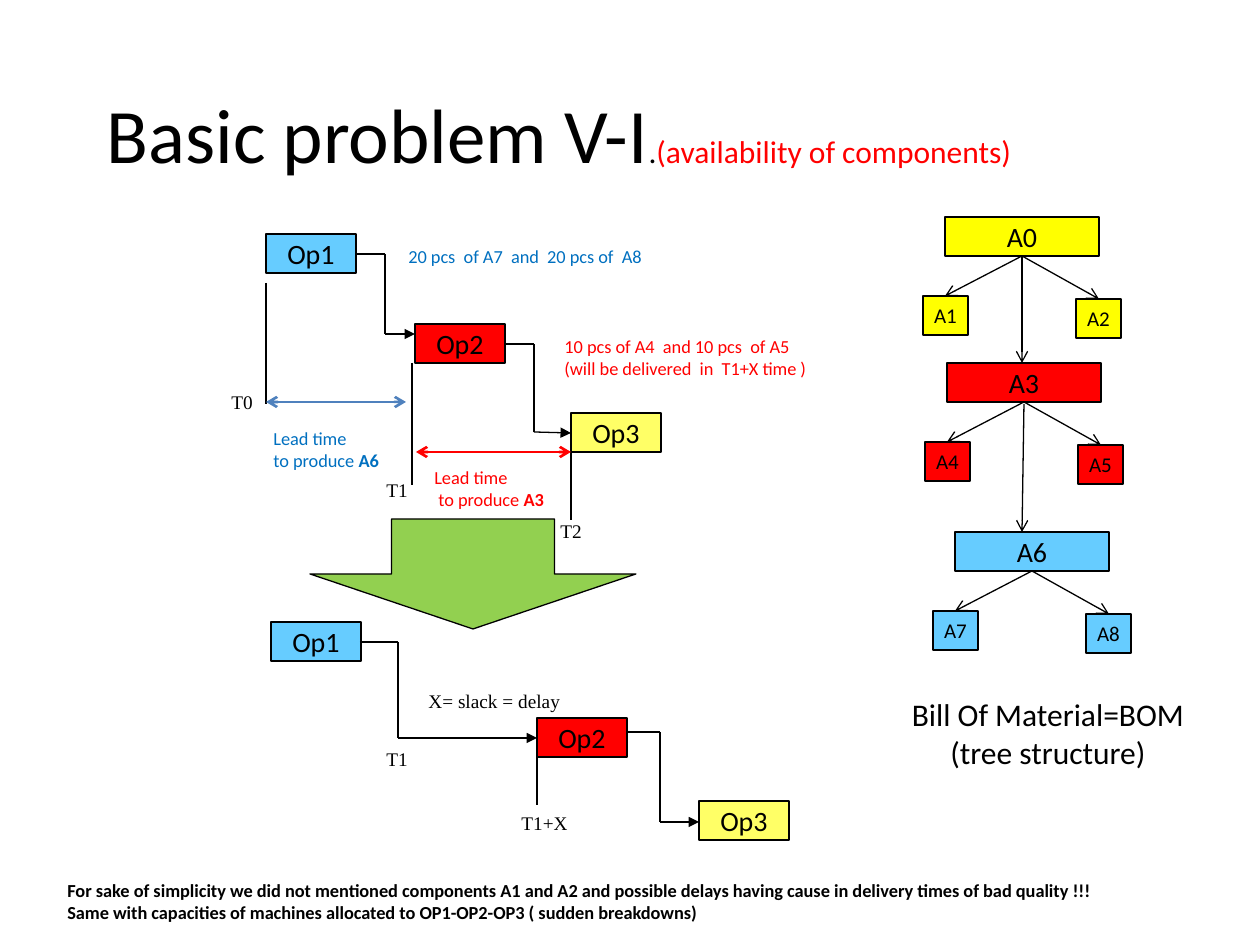
"""Build the slide on lead times and the bill of material tree."""
import dataclasses
import itertools
import typing

import lxml.etree
import pptx
import pptx.dml.color
import pptx.enum.dml
import pptx.enum.shapes
import pptx.enum.text
import pptx.oxml.ns
import pptx.util

SCALE = 914400 / 126
RGB = pptx.dml.color.RGBColor.from_string
SHAPE = pptx.enum.shapes.MSO_SHAPE
ALIGN = pptx.enum.text.PP_ALIGN
ANCHOR = pptx.enum.text.MSO_ANCHOR
FIT = pptx.enum.text.MSO_AUTO_SIZE.SHAPE_TO_FIT_TEXT


@dataclasses.dataclass(frozen=True)
class Theme:
    sans: str = "Calibri"
    serif: str = "Times New Roman"
    black: str = "000000"
    red: str = "FF0000"
    blue: str = "0070C0"
    steel: str = "4F81BD"
    sky: str = "66CCFF"
    lemon: str = "FFFF66"
    yellow: str = "FFFF00"
    green: str = "92D050"
    title: float = 44
    large: float = 18
    box: float = 16
    leaf: float = 12
    mark: float = 11
    note: float = 10.5
    thin: float = 0.75
    thick: float = 1.5


THEME = Theme()


class Point(typing.NamedTuple):
    x: int
    y: int


class Box(typing.NamedTuple):
    text: str
    x: int
    y: int
    fill: str
    width: int = 90
    height: int = 39
    size: float = THEME.box
    kind: SHAPE = SHAPE.RECTANGLE


class Tree(typing.NamedTuple):
    root: str
    left: str
    right: str
    x: int
    y: int
    fill: str


class Label(typing.NamedTuple):
    lines: tuple[str, ...]
    x: int
    y: int
    width: int
    height: int = 37
    color: str = THEME.black
    size: float = THEME.mark
    font: str = THEME.serif
    strong: str = ""
    bold: bool = False
    indent: int = 0
    align: ALIGN = ALIGN.LEFT


BOXES = [
    Box("Op1", 266, 234, THEME.sky),
    Box("Op2", 415, 324, THEME.red),
    Box("Op3", 571, 413, THEME.lemon),
    Box("", 310, 519, THEME.green, 326, 110, kind=SHAPE.DOWN_ARROW),
    Box("Op1", 271, 622, THEME.sky),
    Box("Op2", 537, 718, THEME.red),
    Box("Op3", 699, 801, THEME.lemon),
]
TREES = [
    Tree("A0", "A1", "A2", 945, 217, THEME.yellow),
    Tree("A3", "A4", "A5", 947, 363, THEME.red),
    Tree("A6", "A7", "A8", 955, 532, THEME.sky),
]
ROUTES = [
    [Point(355, 254), Point(385, 254), Point(385, 334), Point(415, 334)],
    [Point(504, 344), Point(534, 344), Point(534, 432), Point(571, 433)],
    [Point(360, 642), Point(398, 642), Point(398, 738), Point(537, 738)],
    [Point(626, 732), Point(660, 732), Point(660, 822), Point(699, 822)],
]
TICKS = [(266, 283, 404), (412, 363, 485), (571, 451, 520), (537, 738, 805)]
SPANS = [(266, 406, 402, THEME.steel), (416, 571, 452, THEME.red)]
NOTE = {"height": 57, "size": THEME.note, "font": THEME.sans}
LABELS = [
    Label(("20 pcs  of A7  and  20 pcs of  A8",), 396, 239, 267,
          **{**NOTE, "height": 35}, color=THEME.blue),
    Label(("10 pcs of A4  and 10 pcs  of A5", "(will be delivered  in  T1+X time )"),
          552, 329, 281, **NOTE, color=THEME.red),
    Label(("Lead time", "to produce "), 261, 421, 134, **NOTE, color=THEME.blue, strong="A6"),
    Label(("Lead time", "to produce "), 422, 460, 137, **NOTE, color=THEME.red,
          strong="A3", indent=4),
    Label(("T0",), 219, 384, 47),
    Label(("T1",), 374, 472, 48),
    Label(("T2",), 548, 513, 47),
    Label(("X= slack = delay",), 416, 683, 158),
    Label(("T1",), 374, 741, 48),
    Label(("T1+X",), 509, 805, 72),
    Label(("Bill Of Material=BOM", "(tree structure)"), 898, 689, 300, 89,
          size=THEME.large, font=THEME.sans, align=ALIGN.CENTER),
    Label(("For sake of simplicity we did not mentioned components A1 and A2 and possible "
           "delays having cause in delivery times of bad quality !!!",
           "Same with capacities of machines allocated to OP1-OP2-OP3 ( sudden breakdowns)"),
          55, 873, 1072, **NOTE, bold=True),
]


def px(count: int) -> int:
    """Turn px into EMU."""
    return round(count * SCALE)


def apply(item: typing.Any, values: dict[str, typing.Any]) -> None:
    """Set each named value on the item."""
    for name, value in values.items():
        setattr(item, name, value)


def write(para: typing.Any, text: str, size: float, color: str = THEME.black,
          font: str = THEME.sans, bold: bool = False) -> None:
    """Add one styled run to the paragraph."""
    run = para.add_run()
    run.text = text
    apply(run.font, {"name": font, "size": pptx.util.Pt(size), "bold": bold})
    run.font.color.rgb = RGB(color)


def draw_box(slide: typing.Any, box: Box) -> None:
    """Draw a filled shape with centred text."""
    shape = slide.shapes.add_shape(box.kind, *map(px, (box.x, box.y, box.width, box.height)))
    shape.shadow.inherit = False
    shape.fill.solid()
    shape.fill.fore_color.rgb = RGB(box.fill)
    shape.line.width = pptx.util.Pt(THEME.thin)
    shape.line.color.rgb = RGB(THEME.black)
    if box.text:
        apply(shape.text_frame, {"word_wrap": False, "vertical_anchor": ANCHOR.MIDDLE})
        para = shape.text_frame.paragraphs[0]
        para.alignment = ALIGN.CENTER
        write(para, box.text, box.size)


def draw_line(slide: typing.Any, start: Point, end: Point, tail: str = "", head: str = "",
              color: str = THEME.black, width: float = THEME.thin) -> None:
    """Draw a straight line with optional arrowheads."""
    line = slide.shapes.add_connector(pptx.enum.shapes.MSO_CONNECTOR.STRAIGHT,
                                      *map(px, (*start, *end)))
    line.line.width = pptx.util.Pt(width)
    line.line.color.rgb = RGB(color)
    qn = pptx.oxml.ns.qn
    props = line._element.spPr
    for tag, kind in (("a:headEnd", head), ("a:tailEnd", tail)):
        if kind:
            lxml.etree.SubElement(props.find(qn("a:ln")), qn(tag), type=kind)
    lxml.etree.SubElement(props, qn("a:effectLst"))


def draw_route(slide: typing.Any, points: list[Point]) -> None:
    """Draw a bent route that ends in an arrowhead."""
    for start, end in itertools.pairwise(points):
        draw_line(slide, start, end, "triangle" if end == points[-1] else "")


def draw_tree(slide: typing.Any, tree: Tree) -> None:
    """Draw a parent part with its two child parts."""
    x, y = tree.x, tree.y
    draw_box(slide, Box(tree.root, x, y, tree.fill, 154))
    for text, shift, drop, tip in ((tree.left, -22, 79, 0), (tree.right, 131, 82, 154)):
        draw_box(slide, Box(text, x + shift, y + drop, tree.fill, 45, size=THEME.leaf))
        draw_line(slide, Point(x + 77, y + 39), Point(x + tip, y + drop), "arrow")


def draw_label(slide: typing.Any, label: Label) -> None:
    """Draw free text, one paragraph a line."""
    shape = slide.shapes.add_textbox(*map(px, (label.x, label.y, label.width, label.height)))
    frame = shape.text_frame
    apply(frame, {"word_wrap": False, "auto_size": FIT})
    look = (label.size, label.color, label.font)
    for index, text in enumerate(label.lines):
        para = frame.add_paragraph() if index else frame.paragraphs[0]
        para.alignment = label.align
        write(para, text, *look, label.bold)
    if label.indent:
        para._p.get_or_add_pPr().set("marL", str(px(label.indent)))
    if label.strong:
        write(para, label.strong, *look, True)


def draw_title(slide: typing.Any) -> None:
    """Place and fill the title."""
    title = slide.shapes.title
    apply(title, dict(zip(("left", "top", "width", "height"), map(px, (94, 54, 1091, 158)))))
    apply(title.text_frame, {"word_wrap": True, "vertical_anchor": ANCHOR.MIDDLE})
    para = title.text_frame.paragraphs[0]
    para.alignment = ALIGN.LEFT
    write(para, "Basic problem V-I", THEME.title)
    write(para, ".", THEME.large)
    write(para, "(availability of components)", THEME.large, THEME.red)


def main() -> None:
    """Build and save the slide."""
    deck = pptx.Presentation()
    apply(deck, {"slide_width": px(1260), "slide_height": px(945)})
    slide = deck.slides.add_slide(deck.slide_layouts[5])
    draw_title(slide)
    for draw, items in ((draw_box, BOXES), (draw_tree, TREES),
                        (draw_route, ROUTES), (draw_label, LABELS)):
        for item in items:
            draw(slide, item)
    draw_line(slide, Point(1022, 256), Point(1022, 363), "arrow")
    draw_line(slide, Point(1024, 404), Point(1022, 532), "arrow")
    for x, top, base in TICKS:
        draw_line(slide, Point(x, top), Point(x, base))
    for left, right, y, color in SPANS:
        draw_line(slide, Point(left, y), Point(right, y), "arrow", "arrow", color, THEME.thick)
    deck.save("out.pptx")


if __name__ == "__main__":
    main()
